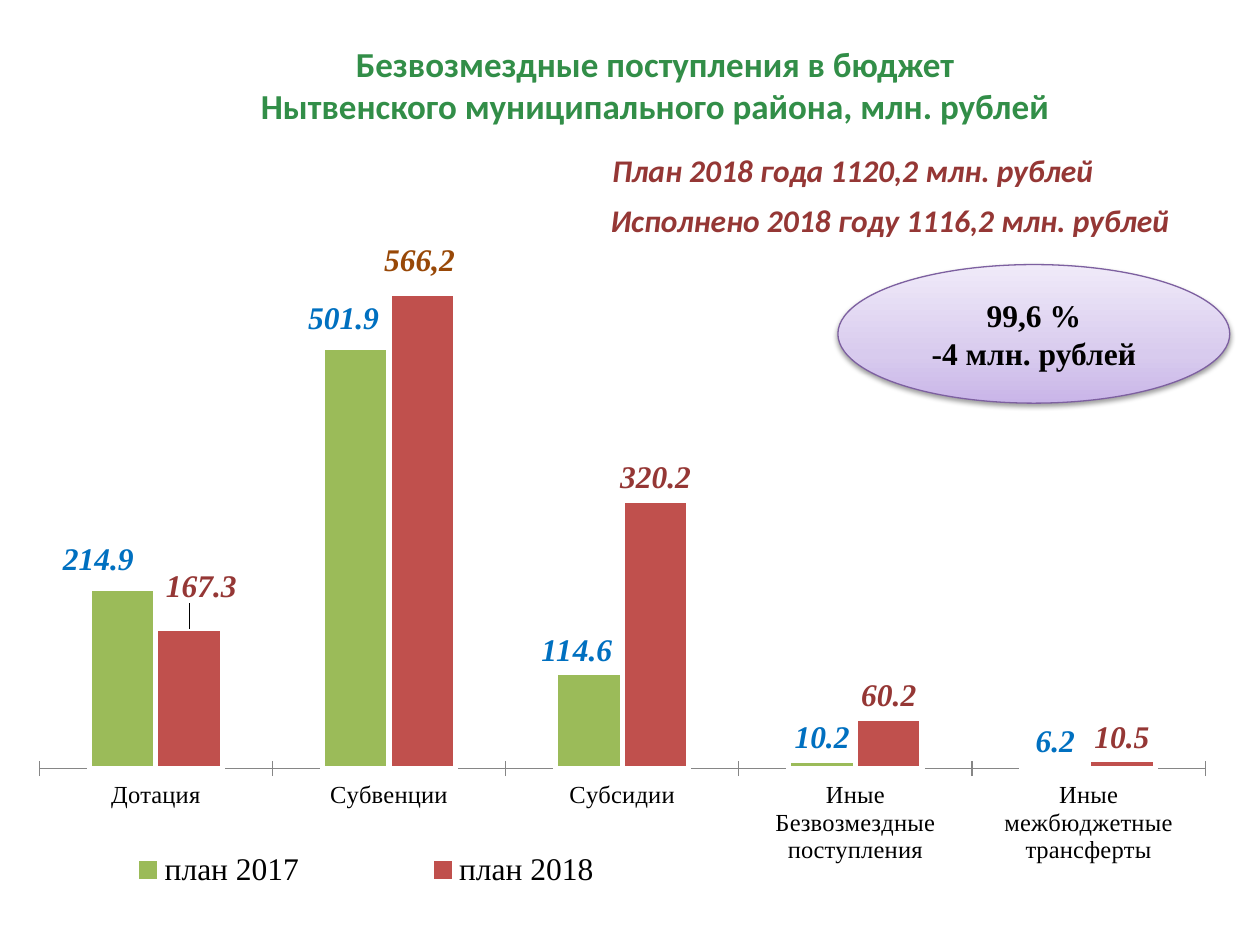
import copy
from dataclasses import dataclass

import lxml.etree
import pptx
import pptx.chart.data
import pptx.dml.color
import pptx.enum.chart
import pptx.enum.shapes
import pptx.enum.text
import pptx.oxml
import pptx.oxml.ns
import pptx.util

Inches = pptx.util.Inches
Pt = pptx.util.Pt
qn = pptx.oxml.ns.qn
ALIGN = pptx.enum.text.PP_ALIGN
ENUM = pptx.enum.chart


@dataclass(frozen=True)
class Theme:
    sans: str = "Calibri"
    serif: str = "Times New Roman"
    black: str = "000000"
    white: str = "FFFFFF"
    green: str = "328E48"
    wine: str = "953735"
    brown: str = "984807"
    blue: str = "0070C0"
    lime: str = "9BBB59"
    red: str = "C0504D"
    gray: str = "868686"
    edge: str = "7D60A0"
    glow: tuple = ((0, "C9B5E8"), (0.35, "D8CBEE"), (1, "F0EAF9"))
    head: int = 20
    body: int = 18
    small: int = 14


@dataclass(frozen=True)
class Note:
    text: str
    box: tuple
    color: str
    face: str
    align: ALIGN = ALIGN.LEFT


@dataclass(frozen=True)
class Bars:
    name: str
    values: tuple
    fill: str
    ink: str
    shifts: dict


THEME = Theme()
KINDS = ("Дотация", "Субвенции", "Субсидии",
         "Иные Безвозмездные поступления", "Иные межбюджетные трансферты")
BARS = (
    Bars("план 2017", (214.9, 501.9, 114.6, 10.2, 6.2), THEME.lime, THEME.blue,
         {0: (-0.02, -0.01), 1: (-0.01, -0.01), 2: (-0.01, 0)}),
    Bars("план 2018", (167.3, 566.2, 320.2, 60.2, 10.5), THEME.red, THEME.wine,
         {0: (0.01, -0.03), 1: None, 2: (0, 0)}),
)
NOTES = (
    Note("Исполнено 2018 году 1116,2 млн. рублей", (4.13, 1.55, 5.87, 0.4),
         THEME.wine, THEME.sans, ALIGN.CENTER),
    Note("План 2018 года 1120,2 млн. рублей", (4.76, 1.15, 5.2, 0.4), THEME.wine, THEME.sans),
    Note("566,2", (2.95, 1.86, 0.79, 0.4), THEME.brown, THEME.serif),
)


def rgb(code: str) -> pptx.dml.color.RGBColor:
    return pptx.dml.color.RGBColor.from_string(code)


def style(font, size: int, color: str, face: str, bold: bool = False, slant: bool = False) -> None:
    font.size = Pt(size)
    font.name = face
    font.bold = bold
    font.italic = slant
    font.color.rgb = rgb(color)


def write(frame, text: str, size: int, color: str, face: str, align: ALIGN,
          slant: bool = False) -> None:
    frame.text = text
    frame.word_wrap = True
    for para in frame.paragraphs:
        para.alignment = align
        for run in para.runs:
            style(run.font, size, color, face, True, slant)


def place(parent, index: int, **sides: float) -> None:
    for old in parent.findall(qn("c:layout")):
        parent.remove(old)
    layout = pptx.oxml.parse_xml(f'<c:layout {pptx.oxml.ns.nsdecls("c")}/>')
    manual = lxml.etree.SubElement(layout, qn("c:manualLayout"))
    for key, val in sides.items():
        lxml.etree.SubElement(manual, qn(f"c:{key}")).set("val", str(val))
    parent.insert(index, layout)


def mark(series, bars: Bars) -> None:
    labels = series.data_labels
    labels.show_value = True
    labels.position = ENUM.XL_LABEL_POSITION.OUTSIDE_END
    style(labels.font, THEME.body, bars.ink, THEME.serif, True, True)
    for index, shift in bars.shifts.items():
        label = series.points[index].data_label
        label.position = ENUM.XL_LABEL_POSITION.OUTSIDE_END
        style(label.font, THEME.body, bars.ink, THEME.serif, True, True)
        node = labels._element.find(f'{qn("c:dLbl")}[{index + 1}]')
        if shift:
            place(node, 1, x=shift[0], y=shift[1])
        else:
            for child in list(node)[1:]:
                node.remove(child)
            lxml.etree.SubElement(node, qn("c:delete")).set("val", "1")


def draw_chart(slide) -> None:
    data = pptx.chart.data.CategoryChartData()
    data.categories = KINDS
    for bars in BARS:
        data.add_series(bars.name, bars.values)
    chart = slide.shapes.add_chart(
        ENUM.XL_CHART_TYPE.COLUMN_CLUSTERED,
        *map(Inches, (0.12, 2.02, 9.61, 5.2)), data).chart
    chart.has_title = False
    style(chart.font, THEME.body, THEME.black, THEME.sans)
    plot = chart.plots[0]
    plot.gap_width = 150
    plot.overlap = 0
    plot.vary_by_categories = False
    for series, bars in zip(plot.series, BARS):
        series.invert_if_negative = False
        series.format.fill.solid()
        series.format.fill.fore_color.rgb = rgb(bars.fill)
        series.format.line.color.rgb = rgb(THEME.white)
        series.format.line.width = Pt(3)
        mark(series, bars)
    axis = chart.category_axis
    axis.major_tick_mark = ENUM.XL_TICK_MARK.CROSS
    axis.format.line.color.rgb = rgb(THEME.gray)
    style(axis.tick_labels.font, THEME.small, THEME.black, THEME.serif)
    scale = chart.value_axis
    scale.minimum_scale = 0
    scale.maximum_scale = 600
    scale.has_major_gridlines = False
    scale.visible = False
    chart.has_legend = True
    legend = chart.legend
    legend.position = ENUM.XL_LEGEND_POSITION.RIGHT
    legend.include_in_layout = False
    style(legend.font, THEME.body, THEME.black, THEME.serif)
    place(legend._element, 1, xMode="edge", yMode="edge", x=0, y=0.9, w=0.58, h=0.08)
    area = chart._chartSpace.find(".//" + qn("c:plotArea"))
    place(area, 0, layoutTarget="inner", xMode="edge", yMode="edge",
          x=0.02, y=0.016, w=0.963, h=0.769)


def draw_title(slide) -> None:
    title = slide.shapes.title
    title.left, title.top, title.width, title.height = map(Inches, (0.67, 0.29, 9.06, 0.77))
    frame = title.text_frame
    write(frame, "Безвозмездные поступления в бюджет\n"
          "Нытвенского муниципального района, млн. рублей",
          THEME.head, THEME.green, THEME.sans, ALIGN.CENTER)
    frame.auto_size = pptx.enum.text.MSO_AUTO_SIZE.NONE
    frame.vertical_anchor = pptx.enum.text.MSO_ANCHOR.TOP


def draw_note(slide, note: Note) -> None:
    box = slide.shapes.add_textbox(*map(Inches, note.box))
    write(box.text_frame, note.text, THEME.body, note.color, note.face, note.align, True)


def draw_oval(slide) -> None:
    oval = slide.shapes.add_shape(
        pptx.enum.shapes.MSO_SHAPE.OVAL, *map(Inches, (6.65, 2.1, 3.11, 1.1)))
    oval.fill.gradient()
    oval.fill.gradient_angle = 90
    props = oval._element.spPr
    stops = props.find(".//" + qn("a:gsLst"))
    stops.insert(1, copy.deepcopy(stops[0]))
    for stop, (spot, color) in zip(oval.fill.gradient_stops, THEME.glow):
        stop.position = spot
        stop.color.rgb = rgb(color)
    oval.line.color.rgb = rgb(THEME.edge)
    oval.line.width = Pt(0.75)
    oval.shadow.inherit = False
    shade = lxml.etree.SubElement(
        props.find(qn("a:effectLst")), qn("a:outerShdw"),
        blurRad=str(Pt(3.1)), dist=str(Pt(1.6)), dir="5400000", rotWithShape="0")
    tint = lxml.etree.SubElement(shade, qn("a:srgbClr"), val=THEME.black)
    lxml.etree.SubElement(tint, qn("a:alpha"), val="38000")
    write(oval.text_frame, "99,6 %\n-4 млн. рублей",
          THEME.body, THEME.black, THEME.serif, ALIGN.CENTER)
    oval.text_frame.vertical_anchor = pptx.enum.text.MSO_ANCHOR.MIDDLE


def main() -> None:
    deck = pptx.Presentation()
    deck.slide_width, deck.slide_height = Inches(10), Inches(7.5)
    slide = deck.slides.add_slide(deck.slide_layouts[5])
    draw_chart(slide)
    draw_title(slide)
    draw_oval(slide)
    for note in NOTES:
        draw_note(slide, note)
    deck.save("out.pptx")


if __name__ == "__main__":
    main()
